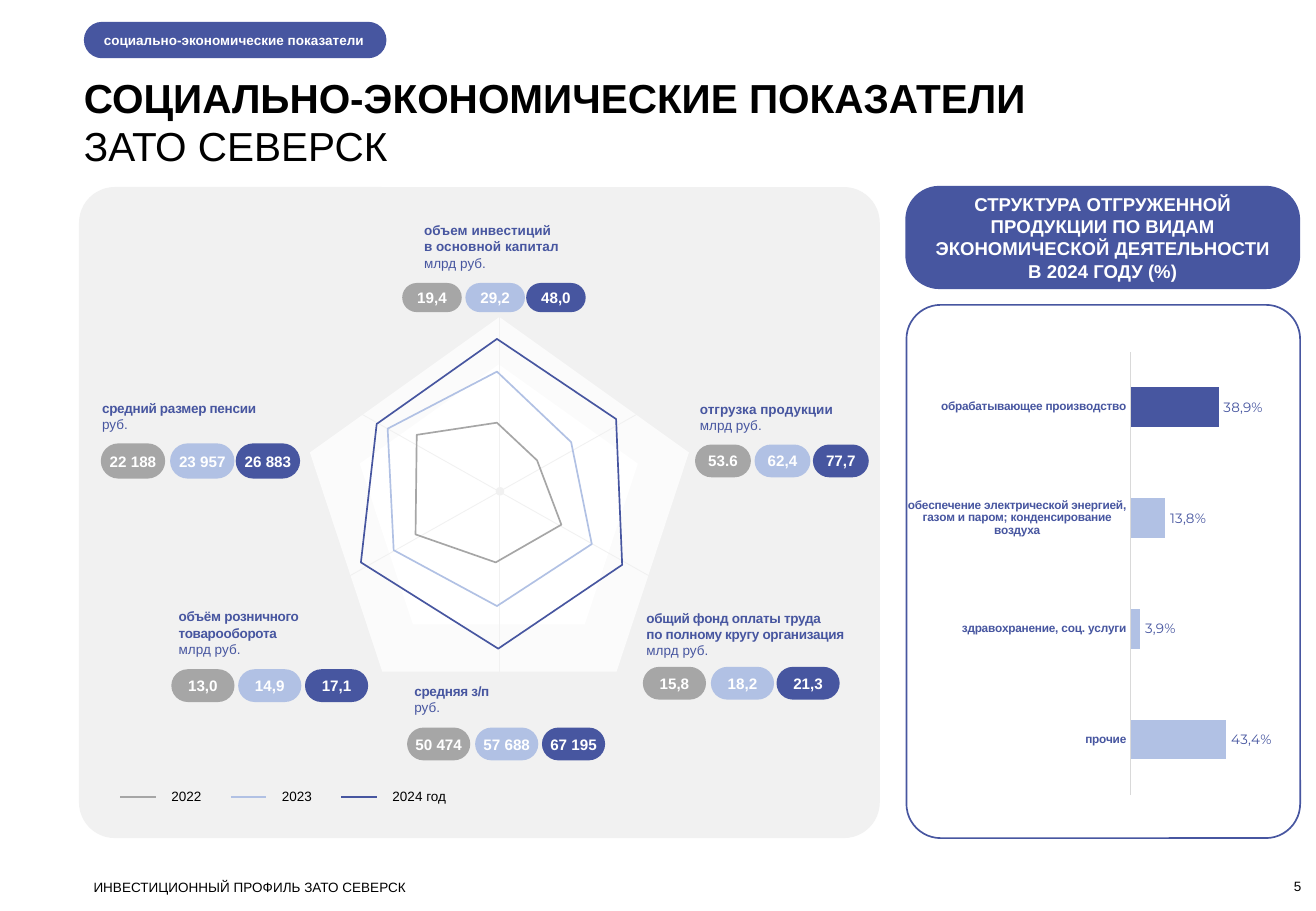
from pptx import Presentation
from pptx.chart.data import CategoryChartData
from pptx.dml.color import RGBColor
from pptx.enum.chart import XL_CHART_TYPE, XL_LABEL_POSITION, XL_TICK_MARK
from pptx.enum.shapes import MSO_CONNECTOR, MSO_SHAPE
from pptx.enum.text import MSO_ANCHOR, MSO_AUTO_SIZE, PP_ALIGN
from pptx.oxml import parse_xml
from pptx.oxml.ns import nsdecls
from pptx.util import Pt

PX = 9144  # one px is a hundredth of an inch
ROUND, PENTAGON, OVAL = MSO_SHAPE.ROUNDED_RECTANGLE, MSO_SHAPE.REGULAR_PENTAGON, MSO_SHAPE.OVAL
STRAIGHT = MSO_CONNECTOR.STRAIGHT
LEFT, CENTER, RIGHT = PP_ALIGN.LEFT, PP_ALIGN.CENTER, PP_ALIGN.RIGHT
TOP, MIDDLE = MSO_ANCHOR.TOP, MSO_ANCHOR.MIDDLE
FIXED = MSO_AUTO_SIZE.NONE
BARS, OUTSIDE, NO_TICK = XL_CHART_TYPE.BAR_CLUSTERED, XL_LABEL_POSITION.OUTSIDE_END, XL_TICK_MARK.NONE


class Theme:
    blue = RGBColor.from_string("4756A0")
    pale = RGBColor.from_string("B1C1E4")
    grey = RGBColor.from_string("A6A6A6")
    panel = RGBColor.from_string("F1F1F1")
    web = RGBColor.from_string("FBFBFB")
    axis = RGBColor.from_string("D9D9D9")
    white = RGBColor.from_string("FFFFFF")
    black = RGBColor.from_string("000000")
    font, digits, base = "Arial", "Montserrat", "Calibri"
    title, head, plain, pill, small, tiny = Pt(24), Pt(11), Pt(10), Pt(9), Pt(8), Pt(7)


deck = Presentation()
deck.slide_width, deck.slide_height = 1083 * PX, 750 * PX
slide = deck.slides.add_slide(deck.slide_layouts[5])
shapes = slide.shapes


def block(kind, box, fill, corner=None):
    """Add a preset shape without outline; fill None leaves it hollow."""
    shape = shapes.add_shape(kind, *[n * PX for n in box])
    shape.shadow.inherit = False
    shape.line.fill.background()
    if fill is None:
        shape.fill.background()
    else:
        shape.fill.solid()
        shape.fill.fore_color.rgb = fill
    if corner is not None:
        shape.adjustments[0] = corner
    return shape


def write(shape, text, size, color, bold=0, align=LEFT, anchor=TOP, tight=0):
    """Fill a shape with text; its first `bold` paragraphs are bold, and `tight` spaces them."""
    frame = shape.text_frame
    frame.text = text
    frame.word_wrap = True
    frame.auto_size = FIXED
    frame.vertical_anchor = anchor
    frame.margin_left = frame.margin_right = frame.margin_top = frame.margin_bottom = 0
    for row, line in enumerate(frame.paragraphs):
        line.alignment = align
        for run in line.runs:
            run.font.name, run.font.size = Theme.font, size
            run.font.bold = row < bold
            run.font.color.rgb = color
            if tight and row < bold:
                run.font._element.set("spc", str(tight))


# Title, heading pills and panels
title = shapes.title
title.left, title.top, title.width, title.height = [n * PX for n in (69, 60, 965, 81)]
write(title, "СОЦИАЛЬНО-ЭКОНОМИЧЕСКИЕ ПОКАЗАТЕЛИ\nЗАТО СЕВЕРСК", Theme.title, Theme.black, 1)

topic = block(ROUND, (69, 18, 249, 30), Theme.blue, 0.5)
write(topic, "социально-экономические показатели", Theme.small, Theme.white, 1, anchor=MIDDLE)
topic.text_frame.margin_left = 12 * PX

block(ROUND, (65, 154, 659, 536), Theme.panel, 0.055)
head = block(ROUND, (745, 153, 325, 85), Theme.blue, 0.33)
write(head, "СТРУКТУРА ОТГРУЖЕННОЙ\vПРОДУКЦИИ ПО ВИДАМ\vЭКОНОМИЧЕСКОЙ ДЕЯТЕЛЬНОСТИ\vВ 2024 ГОДУ (%)",
      Theme.head, Theme.white, 1, CENTER, MIDDLE)
frame = block(ROUND, (746, 251, 324, 439), None, 0.087)
frame.line.color.rgb, frame.line.width = Theme.blue, Pt(1)

# Bar chart of shipped output
bars = [
    ("прочие", 0.42, "43,4%", Theme.pale),
    ("здравохранение, соц. услуги", 0.042, "3,9%", Theme.pale),
    ("обеспечение электрической энергией, газом и паром; конденсирование воздуха",
     0.152, "13,8%", Theme.pale),
    ("обрабатывающее производство", 0.386, "38,9%", Theme.blue),
]
data = CategoryChartData(number_format="0.00%")
data.categories = [bar[0] for bar in bars]
data.add_series("Series 1", [bar[1] for bar in bars])
chart = shapes.add_chart(BARS, 746 * PX, 250 * PX, 324 * PX, 440 * PX, data).chart
chart.has_title = chart.has_legend = False
chart.font.name, chart.font.size, chart.font.color.rgb = Theme.base, Theme.plain, Theme.black

scale = chart.value_axis
scale.visible = scale.has_major_gridlines = False
names = chart.category_axis
names.major_tick_mark = names.minor_tick_mark = NO_TICK
names.format.line.color.rgb, names.format.line.width = Theme.axis, Pt(0.75)
font = names.tick_labels.font
font.name, font.size, font.bold, font.color.rgb = Theme.font, Theme.tiny, True, Theme.blue

plot = chart.plots[0]
plot.gap_width, plot.vary_by_categories = 182, False
series = plot.series[0]
series.format.fill.solid()
series.format.fill.fore_color.rgb = Theme.pale
notes = series.data_labels
notes.show_value, notes.position = True, OUTSIDE
notes.number_format, notes.number_format_is_linked = "0.00%", False
font = notes.font
font.name, font.size, font.bold, font.color.rgb = Theme.digits, Theme.small, True, Theme.blue
for index, (name, value, label, color) in enumerate(bars):
    point = series.points[index]
    point.format.fill.solid()
    point.format.fill.fore_color.rgb = color
    note = point.data_label
    note.text_frame.text = label
    note.position = OUTSIDE
    font = note.text_frame.paragraphs[0].runs[0].font
    font.name, font.size, font.bold, font.color.rgb = Theme.digits, Theme.small, False, Theme.blue

area = chart.element.find(".//{*}plotArea")
for old in area.findall("{*}layout"):
    area.remove(old)
area.insert(0, parse_xml(
    f'<c:layout {nsdecls("c")}><c:manualLayout><c:layoutTarget val="inner"/>'
    '<c:xMode val="edge"/><c:yMode val="edge"/><c:x val="0.57"/><c:y val="0.09"/>'
    '<c:w val="0.26"/><c:h val="0.83"/></c:manualLayout></c:layout>'))

# Radar web, then its spokes and the legend strokes
block(PENTAGON, (255, 261, 312, 292), Theme.web)
block(PENTAGON, (296, 300, 229, 214), Theme.white)
strokes = [
    ((411, 261, 411, 553), Theme.panel, 0.5),
    ((526, 340, 288, 474), Theme.panel, 0.5),
    ((296, 340, 534, 474), Theme.panel, 0.5),
]
years = [("2022", Theme.grey), ("2023", Theme.pale), ("2024 год", Theme.blue)]
texts = [
    ("5", (991, 723, 80, 13), RIGHT),
    ("ИНВЕСТИЦИОННЫЙ ПРОФИЛЬ ЗАТО СЕВЕРСК", (77, 724, 286, 13), LEFT),
]
for index, (year, color) in enumerate(years):
    x = 99 + 91 * index
    strokes.append(((x, 656, x + 29, 656), color, 1))
    texts.append((year, (x + 42, 649, 60, 13), LEFT))
for ends, color, width in strokes:
    line = shapes.add_connector(STRAIGHT, *[n * PX for n in ends])
    line.line.color.rgb, line.line.width = color, Pt(width)
    line._element.spPr.append(parse_xml(f'<a:effectLst {nsdecls("a")}/>'))
for text, box, align in texts:
    write(shapes.add_textbox(*[n * PX for n in box]), text, Theme.small, Theme.black, align=align)
block(OVAL, (408, 401, 7, 7), Theme.panel)

# Indicators: label, its box, letter spacing, pill lefts, pill top and size, values by year
groups = [
    ("объем инвестиций\nв основной капитал\nмлрд руб.", (349, 183, 123, 40), 0,
     (331, 383, 433), (233, 49, 24), ("19,4", "29,2", "48,0")),
    ("отгрузка продукции\nмлрд руб.", (576, 330, 123, 27), 0,
     (572, 621, 669), (366, 46, 27), ("53.6", "62,4", "77,7")),
    ("общий фонд оплаты труда\vпо полному кругу организация\nмлрд руб.", (532, 502, 171, 40), -20,
     (529, 585, 639), (549, 52, 27), ("15,8", "18,2", "21,3")),
    ("объём розничного товарооборота\nмлрд руб.", (147, 501, 108, 40), -20,
     (141, 196, 251), (551, 52, 27), ("13,0", "14,9", "17,1")),
    ("средний размер пенсии\nруб.", (84, 329, 171, 27), -20,
     (83, 140, 194), (365, 53, 29), ("22 188", "23 957", "26 883")),
    ("средняя з/п\nруб.", (341, 562, 108, 27), -20,
     (335, 391, 446), (599, 52, 27), ("50 474", "57 688", "67 195")),
]
for label, box, tight, lefts, (top, wide, high), values in groups:
    write(shapes.add_textbox(*[n * PX for n in box]), label, Theme.small, Theme.blue,
          label.count("\n"), tight=tight)
    for left, value, (year, color) in zip(lefts, values, years):
        pill = block(ROUND, (left, top, wide, high), color, 0.5)
        write(pill, value, Theme.pill, Theme.white, 1, CENTER, MIDDLE)

# Radar outline of each year
rings = [
    [(343, 358), (409, 348), (442, 379), (462, 432), (408, 463), (342, 440)],
    [(319, 353), (409, 306), (470, 364), (487, 448), (409, 499), (324, 453)],
    [(310, 349), (409, 279), (507, 345), (512, 465), (410, 534), (297, 463)],
]
for (year, color), ring in zip(years, rings):
    pen = shapes.build_freeform(*ring[0], scale=PX)
    pen.add_line_segments(ring[1:], close=True)
    loop = pen.convert_to_shape()
    loop.shadow.inherit = False
    loop.fill.background()
    loop.line.color.rgb, loop.line.width = color, Pt(1)

deck.save("out.pptx")
